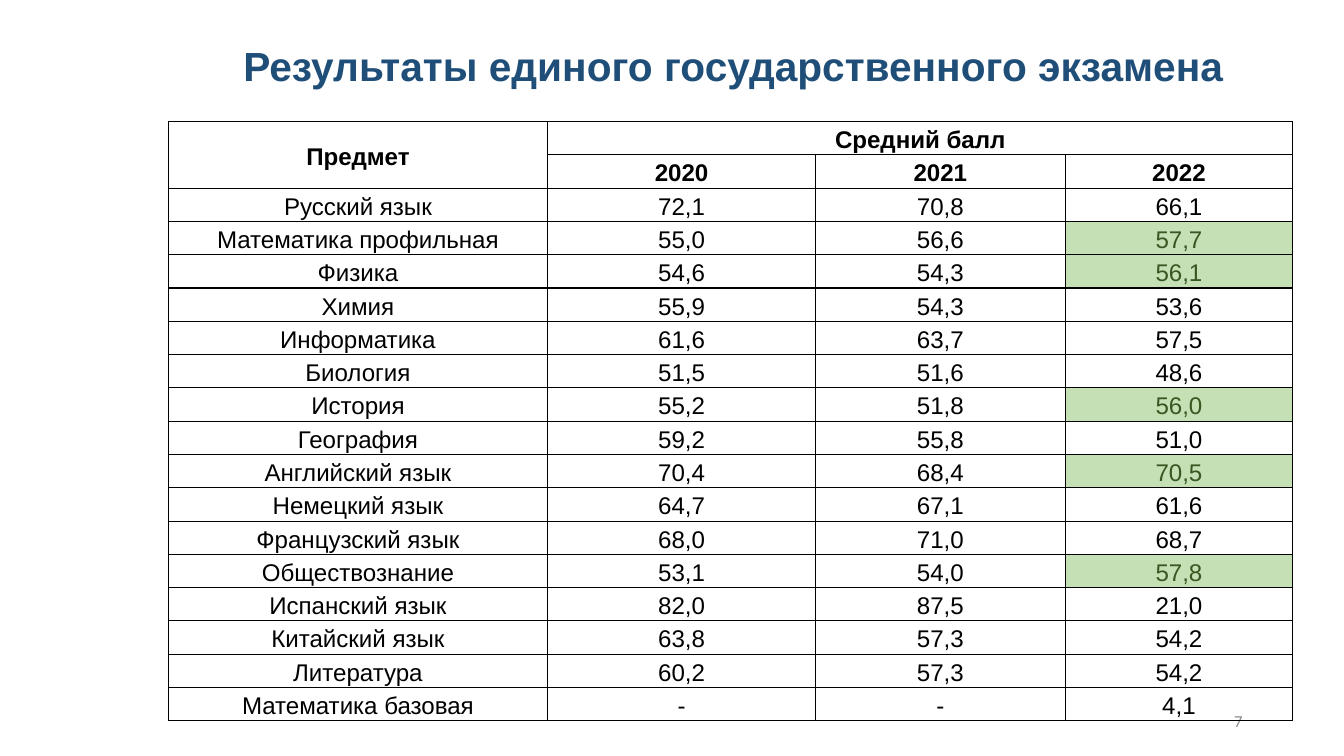
from dataclasses import dataclass

from lxml.etree import SubElement
from pptx import Presentation
from pptx.dml.color import RGBColor
from pptx.enum.text import MSO_ANCHOR, PP_ALIGN
from pptx.oxml.ns import qn
from pptx.util import Inches, Pt


@dataclass(frozen=True)
class Theme:
    heading: str = "1F4E79"
    ink: str = "000000"
    muted: str = "8C8C8C"
    paper: str = "FFFFFF"
    growth_fill: str = "C5E0B4"
    growth_ink: str = "385723"
    font: str = "Arial"
    number_font: str = "Calibri"
    title_size: float = 32
    table_size: float = 19
    number_size: float = 13.2
    border: float = 1


THEME = Theme()
TITLE = "Результаты единого государственного экзамена"
YEARS = ["2020", "2021", "2022"]
RESULTS = [
    ("Русский язык", "72,1", "70,8", "66,1"),
    ("Математика профильная", "55,0", "56,6", "57,7"),
    ("Физика", "54,6", "54,3", "56,1"),
    ("Химия", "55,9", "54,3", "53,6"),
    ("Информатика", "61,6", "63,7", "57,5"),
    ("Биология", "51,5", "51,6", "48,6"),
    ("История", "55,2", "51,8", "56,0"),
    ("География", "59,2", "55,8", "51,0"),
    ("Английский язык", "70,4", "68,4", "70,5"),
    ("Немецкий язык", "64,7", "67,1", "61,6"),
    ("Французский язык", "68,0", "71,0", "68,7"),
    ("Обществознание", "53,1", "54,0", "57,8"),
    ("Испанский язык", "82,0", "87,5", "21,0"),
    ("Китайский язык", "63,8", "57,3", "54,2"),
    ("Литература", "60,2", "57,3", "54,2"),
    ("Математика базовая", "-", "-", "4,1"),
]
COLUMN_WIDTHS = [4.15, 2.93, 2.73, 2.49]


def write(frame, text, *, size, color=THEME.ink, font=THEME.font, bold=False,
          align=PP_ALIGN.CENTER, spacing=1.0):
    paragraph = frame.paragraphs[0]
    paragraph.alignment = align
    paragraph.line_spacing = spacing
    run = paragraph.add_run()
    run.text = text
    run.font.name = font
    run.font.size = Pt(size)
    run.font.bold = bold
    run.font.color.rgb = RGBColor.from_string(color)


def add_title(slide, left, top, width, height):
    title = slide.shapes.title
    title.left, title.top = Inches(left), Inches(top)
    title.width, title.height = Inches(width), Inches(height)
    title.text_frame.word_wrap = False
    title.text_frame.vertical_anchor = MSO_ANCHOR.MIDDLE
    write(title.text_frame, TITLE, size=THEME.title_size, color=THEME.heading, bold=True)


def add_page_number(slide, number, left, top, width, height):
    box = slide.shapes.add_textbox(Inches(left), Inches(top), Inches(width), Inches(height))
    box.text_frame.word_wrap = True
    box.text_frame.vertical_anchor = MSO_ANCHOR.MIDDLE
    write(box.text_frame, number, size=THEME.number_size, color=THEME.muted,
          font=THEME.number_font, align=PP_ALIGN.RIGHT)


def format_cell(cell, fill):
    cell.margin_left = cell.margin_right = Inches(0.07)
    cell.margin_top = cell.margin_bottom = 0
    cell.vertical_anchor = MSO_ANCHOR.MIDDLE
    properties = cell._tc.get_or_add_tcPr()
    # Borders come before the fill in the cell properties
    for side in ("a:lnL", "a:lnR", "a:lnT", "a:lnB"):
        line = SubElement(properties, qn(side), w=str(Pt(THEME.border)))
        solid = SubElement(line, qn("a:solidFill"))
        SubElement(solid, qn("a:srgbClr"), val=THEME.ink)
    if fill is None:
        cell.fill.background()
    else:
        cell.fill.solid()
        cell.fill.fore_color.rgb = RGBColor.from_string(fill)


def has_grown(scores):
    """The latest score beats every earlier one."""
    if "-" in scores:
        return False
    *earlier, latest = [float(score.replace(",", ".")) for score in scores]
    return latest > max(earlier)


def add_results(slide, left, top, width, height):
    rows = [("Предмет", "Средний балл", "", ""), ("", *YEARS), *RESULTS]
    header_rows = len(rows) - len(RESULTS)
    table = slide.shapes.add_table(len(rows), len(COLUMN_WIDTHS), Inches(left), Inches(top),
                                   Inches(width), Inches(height)).table
    table.first_row = table.horz_banding = False
    for column, column_width in zip(table.columns, COLUMN_WIDTHS):
        column.width = Inches(column_width)

    # Headings and scores; latest scores stay clear so the page number shows through
    for row_index, values in enumerate(rows):
        is_header = row_index < header_rows
        for column_index, value in enumerate(values):
            is_latest = not is_header and column_index == len(YEARS)
            grown = is_latest and has_grown(values[1:])
            plain_fill = None if is_latest else THEME.paper
            cell = table.cell(row_index, column_index)
            format_cell(cell, THEME.growth_fill if grown else plain_fill)
            if value:
                write(cell.text_frame, value, size=THEME.table_size, bold=is_header,
                      color=THEME.growth_ink if grown else THEME.ink, spacing=1.15)

    # Merged headings
    table.cell(0, 0).merge(table.cell(1, 0))
    table.cell(0, 1).merge(table.cell(0, len(YEARS)))


def main():
    deck = Presentation()
    deck.slide_width, deck.slide_height = Inches(14.7), Inches(8.27)
    slide = deck.slides.add_slide(deck.slide_layouts[5])
    add_page_number(slide, "7", 10.38, 7.66, 3.31, 0.44)
    add_title(slide, 2.52, 0.39, 11.01, 0.64)
    add_results(slide, 1.84, 1.33, sum(COLUMN_WIDTHS), 6.55)
    deck.save("out.pptx")


if __name__ == "__main__":
    main()
